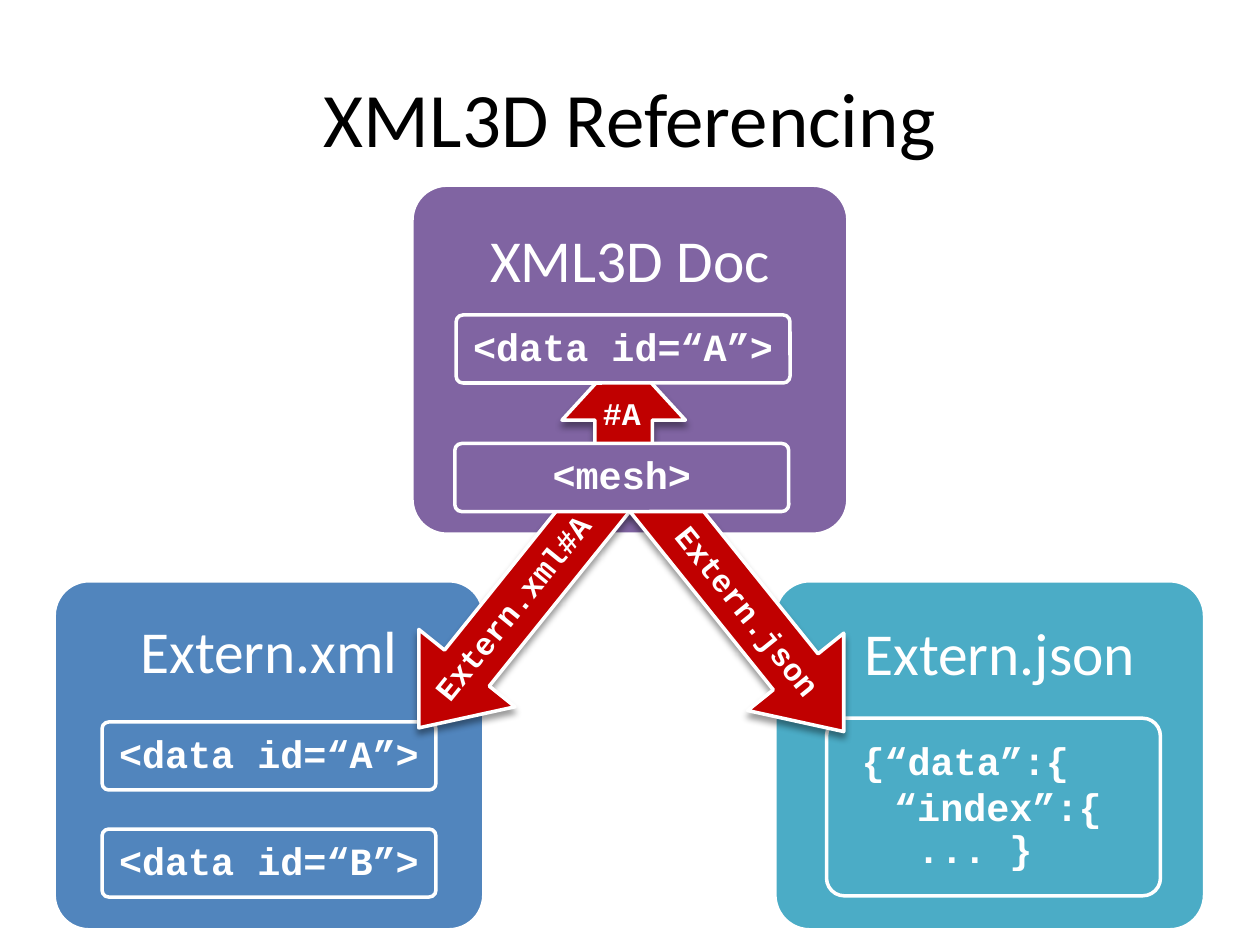
"""Build the XML3D referencing slide: three documents linked by reference arrows."""
import dataclasses

import lxml.etree
import pptx
import pptx.dml.color
import pptx.enum.shapes
import pptx.enum.text
import pptx.oxml.ns
import pptx.util

Inches = pptx.util.Inches
RGBColor = pptx.dml.color.RGBColor
Shape = pptx.enum.shapes.MSO_SHAPE
Anchor = pptx.enum.text.MSO_ANCHOR
Align = pptx.enum.text.PP_ALIGN

BLACK = RGBColor(0x00, 0x00, 0x00)
WHITE = RGBColor(0xFF, 0xFF, 0xFF)
PURPLE = RGBColor(0x80, 0x64, 0xA2)
BLUE = RGBColor(0x51, 0x85, 0xBD)
TEAL = RGBColor(0x4B, 0xAC, 0xC6)
RED = RGBColor(0xC0, 0x00, 0x00)

HEADING = {"name": "Calibri", "size": pptx.util.Pt(34), "bold": False}
CODE = {"name": "Courier New", "size": pptx.util.Pt(22), "bold": True}
LABEL = CODE | {"size": pptx.util.Pt(18)}


@dataclasses.dataclass(frozen=True)
class Box:
    left: float
    top: float
    width: float
    height: float

    def lengths(self) -> tuple:
        return tuple(Inches(value) for value in dataclasses.astuple(self))


@dataclasses.dataclass(frozen=True)
class Card:
    text: str
    box: Box
    color: RGBColor
    font: dict
    insets: tuple = (0.09, 0.09, 0.09, 0.09)
    anchor: Anchor = Anchor.MIDDLE
    align: Align = Align.CENTER
    lead: str = ""


@dataclasses.dataclass(frozen=True)
class Reference:
    text: str
    box: Box
    angle: float
    label_box: Box
    label_angle: float


def panel(text: str, box: Box, color: RGBColor, left: float = 0.25, top: float = 0.25) -> Card:
    return Card(text, box, color, HEADING, (left, top, 0.25, 0.25), Anchor.TOP)


def element_box(text: str, left: float, top: float, color: RGBColor) -> Card:
    return Card(text, Box(left, top, 2.65, 0.54), color, CODE)


PANELS = [
    panel("XML3D Doc", Box(3.27, 1.47, 3.46, 2.77), PURPLE, top=0.28),
    panel("Extern.xml", Box(0.43, 4.61, 3.41, 2.77), BLUE),
    panel("Extern.json", Box(6.15, 4.61, 3.41, 2.77), TEAL, left=0.41, top=0.26),
]
EXTERNAL_DATA = [
    element_box("<data id=“A”>", 0.81, 5.73, BLUE),
    element_box("<data id=“B”>", 0.81, 6.58, BLUE),
    Card("{“data”:{\v  “index”:{\v   ... }", Box(6.56, 5.7, 2.65, 1.41), TEAL, CODE,
         (0.13, 0.09, 0.09, 0.23), align=Align.LEFT, lead=" "),
]
REFERENCES = [
    Reference("Extern.xml#A", Box(2.87, 4.34, 2.43, 0.98), 128.8,
              Box(2.8, 4.56, 2.55, 0.54), 308.9),
    Reference("#A", Box(4.52, 2.74, 0.86, 0.98), 270,
              Box(4.61, 3.03, 0.65, 0.54), 0),
    Reference("Extern.json", Box(4.72, 4.37, 2.43, 0.98), 51.2,
              Box(4.65, 4.59, 2.55, 0.54), 51.1),
]
DOCUMENT_ELEMENTS = [
    element_box("<mesh>", 3.61, 3.52, PURPLE),
    element_box("<data id=“A”>", 3.62, 2.5, PURPLE),
]


def apply(target, formats: dict) -> None:
    for name, value in formats.items():
        setattr(target, name, value)


def write(frame, text: str, font: dict, insets: tuple, anchor: Anchor, align: Align,
          lead: str = "") -> None:
    sides = ("margin_left", "margin_top", "margin_right", "margin_bottom")
    margins = dict(zip(sides, map(Inches, insets)))
    apply(frame, margins | {"word_wrap": True, "vertical_anchor": anchor})
    paragraph = frame.paragraphs[0]
    apply(paragraph, {"alignment": align, "line_spacing": 0.9})
    if lead:
        indent = paragraph.add_run()
        indent.text = lead
        apply(indent.font, HEADING)
    for number, line in enumerate(text.split("\v")):
        if number:
            paragraph.add_line_break()
        run = paragraph.add_run()
        run.text = line
        apply(run.font, font)
        run.font.color.rgb = WHITE


def add_outlined(slide, kind: Shape, box: Box, color: RGBColor, adjustments: tuple):
    outlined = slide.shapes.add_shape(kind, *box.lengths())
    outlined.shadow.inherit = False
    outlined.fill.solid()
    outlined.fill.fore_color.rgb = color
    outlined.line.color.rgb = WHITE
    outlined.line.width = pptx.util.Pt(2)
    for number, value in enumerate(adjustments):
        outlined.adjustments[number] = value
    return outlined


def add_card(slide, card: Card) -> None:
    outlined = add_outlined(slide, Shape.ROUNDED_RECTANGLE, card.box, card.color, (0.1,))
    write(outlined.text_frame, card.text, card.font, card.insets, card.anchor, card.align,
          card.lead)


def add_shadow(arrow) -> None:
    qn = pptx.oxml.ns.qn
    effects = arrow.element.spPr.find(qn("a:effectLst"))
    shadow = lxml.etree.SubElement(
        effects, qn("a:outerShdw"), blurRad=str(pptx.util.Pt(4)),
        dist=str(pptx.util.Pt(3)), dir="5400000", rotWithShape="0")
    tint = lxml.etree.SubElement(shadow, qn("a:srgbClr"), val=str(BLACK))
    lxml.etree.SubElement(tint, qn("a:alpha"), val="40000")


def add_reference(slide, reference: Reference) -> None:
    arrow = add_outlined(slide, Shape.RIGHT_ARROW, reference.box, RED, (0.465, 0.621))
    arrow.rotation = reference.angle
    add_shadow(arrow)
    label = slide.shapes.add_textbox(*reference.label_box.lengths())
    label.rotation = reference.label_angle
    write(label.text_frame, reference.text, LABEL, (0.09,) * 4, Anchor.MIDDLE, Align.CENTER)


def add_title(slide) -> None:
    title = slide.shapes.title
    places = ("left", "top", "width", "height")
    apply(title, dict(zip(places, Box(0.5, 0.3, 9, 1.25).lengths())))
    title.text_frame.text = "XML3D Referencing"
    title.text_frame.vertical_anchor = Anchor.MIDDLE
    heading = title.text_frame.paragraphs[0]
    heading.alignment = Align.CENTER
    apply(heading.font, {"name": "Calibri", "size": pptx.util.Pt(44)})
    heading.font.color.rgb = BLACK


def main() -> None:
    deck = pptx.Presentation()
    apply(deck, {"slide_width": Inches(10), "slide_height": Inches(7.5)})
    slide = deck.slides.add_slide(deck.slide_layouts.get_by_name("Title Only"))
    add_title(slide)
    for card in PANELS + EXTERNAL_DATA:
        add_card(slide, card)
    for reference in REFERENCES:
        add_reference(slide, reference)
    for card in DOCUMENT_ELEMENTS:
        add_card(slide, card)
    deck.save("out.pptx")


if __name__ == "__main__":
    main()
